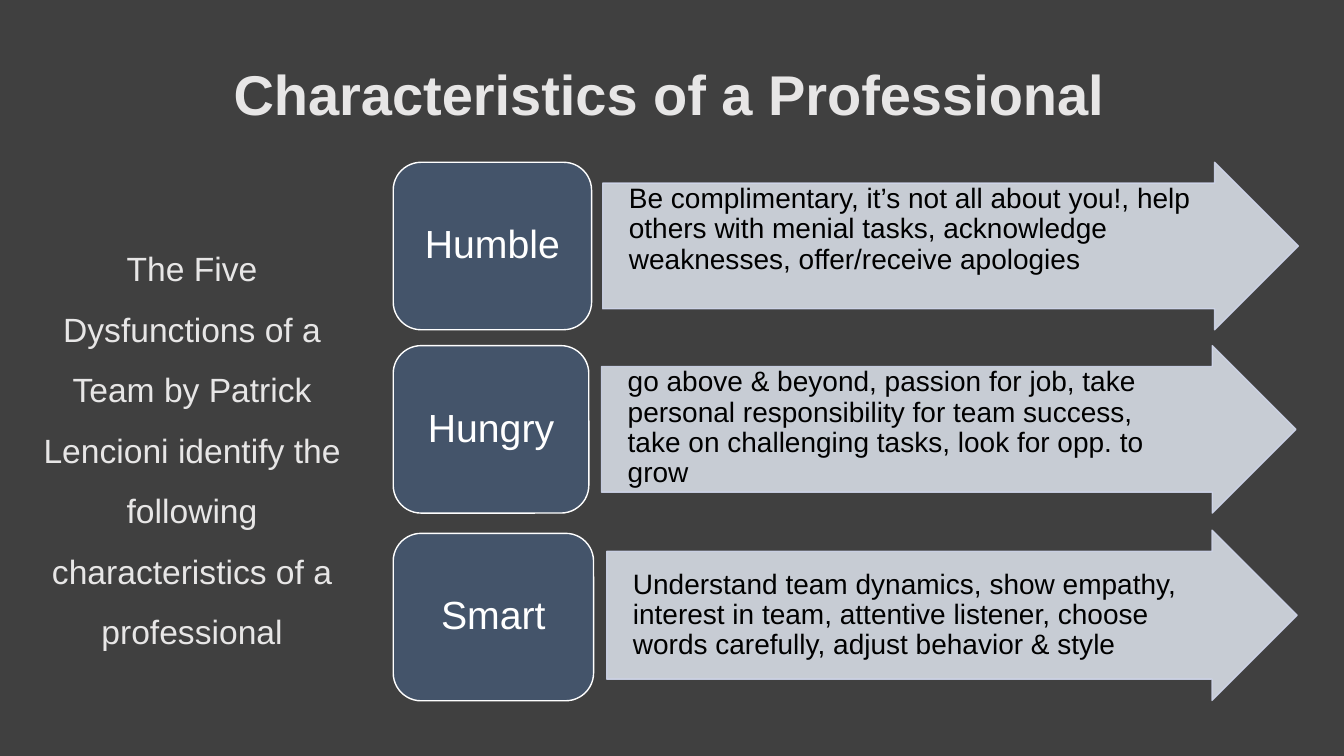
from lxml import etree
from pptx import Presentation, util as u
from pptx.dml.color import RGBColor
from pptx.enum import shapes, text
from pptx.oxml.ns import qn

CHARCOAL = RGBColor(0x40, 0x40, 0x40)
LIGHT_GRAY = RGBColor(0xE7, 0xE6, 0xE6)
PALE_BLUE = RGBColor(0xD6, 0xDC, 0xE5)
ARROW_EDGE = RGBColor(0xCF, 0xD5, 0xEA)
SLATE = RGBColor(0x44, 0x54, 0x6A)
WHITE = RGBColor(0xFF, 0xFF, 0xFF)
BLACK = RGBColor(0, 0, 0)

CENTER, LEFT = text.PP_ALIGN.CENTER, text.PP_ALIGN.LEFT
MIDDLE, TOP = text.MSO_ANCHOR.MIDDLE, text.MSO_ANCHOR.TOP

# Name, tile top and width, arrow left, top, width and height (cm), text anchor, details
TRAITS = [
    ("Humble", 4.09, 5.0, 15.19, 4.09, 17.53, 4.22, TOP,
     "Be complimentary, it’s not all about you!, help others with menial tasks, "
     "acknowledge weaknesses, offer/receive apologies"),
    ("Hungry", 8.71, 4.93, 15.16, 8.71, 17.5, 4.22, TOP,
     "go above & beyond, passion for job, take personal responsibility for team success, "
     "take on challenging tasks, look for opp. to grow"),
    ("Smart", 13.44, 5.05, 15.29, 13.36, 17.4, 4.29, MIDDLE,
     "Understand team dynamics, show empathy, interest in team, attentive listener, "
     "choose words carefully, adjust behavior & style"),
]
TILE_LEFT, TILE_HEIGHT = 9.91, 4.22


class SlideBuilder:
    font_name = "Arial"

    def __init__(self, slide):
        self.slide = slide
        slide.background.fill.solid()
        slide.background.fill.fore_color.rgb = CHARCOAL

    def set_text(self, shape, words, size, color, align=CENTER, anchor=MIDDLE,
                 spacing=0.9, before=0, bold=False, insets=(0.25, 0.13, 0.25, 0.13)):
        frame = shape.text_frame
        sides = ("margin_left", "margin_top", "margin_right", "margin_bottom")
        frame_format = {side: u.Cm(inset) for side, inset in zip(sides, insets)}
        frame_format.update(word_wrap=True, vertical_anchor=anchor)
        paragraph = frame.paragraphs[0]
        paragraph.text = words
        formats = [
            (frame, frame_format),
            (paragraph, {"alignment": align, "line_spacing": spacing,
                         "space_before": u.Pt(before)}),
            (paragraph.runs[0].font, {"name": self.font_name, "size": u.Pt(size), "bold": bold}),
        ]
        for target, values in formats:
            for name, value in values.items():
                setattr(target, name, value)
        paragraph.runs[0].font.color.rgb = color

    def text_box(self, box, words, size, **style):
        shape = self.slide.shapes.add_textbox(*map(u.Cm, box))
        self.set_text(shape, words, size, LIGHT_GRAY, **style)

    def block(self, kind, box, fill, line):
        shape = self.slide.shapes.add_shape(kind, *map(u.Cm, box))
        shape.shadow.inherit = False
        shape.fill.solid()
        shape.fill.fore_color.rgb = fill
        shape.line.color.rgb = line
        shape.line.width = u.Pt(1)
        return shape

    def arrow(self, box, words, anchor):
        shape = self.block(shapes.MSO_SHAPE.RIGHT_ARROW, box, PALE_BLUE, ARROW_EDGE)
        shape.adjustments[0], shape.adjustments[1] = 0.75, 0.5
        # Fill and outline are 90% opaque
        for color in shape._element.spPr.iter(qn("a:srgbClr")):
            etree.SubElement(color, qn("a:alpha"), val="90000")
        # The right inset keeps the text out of the arrowhead
        self.set_text(shape, words, 20, BLACK, align=LEFT, anchor=anchor,
                      insets=(0.66, 0.03, 1.05, 0.03))

    def tile(self, box, words):
        shape = self.block(shapes.MSO_SHAPE.ROUNDED_RECTANGLE, box, SLATE, WHITE)
        self.set_text(shape, words, 28, WHITE, insets=(0.3, 0.15, 0.3, 0.15))


def main():
    presentation = Presentation()
    presentation.slide_width, presentation.slide_height = u.Cm(33.87), u.Cm(19.05)
    builder = SlideBuilder(presentation.slides.add_slide(presentation.slide_layouts[6]))

    # Title and introduction
    builder.text_box((0.74, 0.84, 32.23, 3.23), "Characteristics of a Professional",
                     40, bold=True)
    builder.text_box((0.74, 4.52, 8.2, 13.13),
                     "The Five Dysfunctions of a Team by Patrick Lencioni identify "
                     "the following characteristics of a professional",
                     24, spacing=1.5, before=10)

    # One arrow and one tile per trait
    for name, tile_top, tile_width, left, top, width, height, anchor, details in TRAITS:
        builder.arrow((left, top, width, height), details, anchor)
        builder.tile((TILE_LEFT, tile_top, tile_width, TILE_HEIGHT), name)

    presentation.save("out.pptx")


if __name__ == "__main__":
    main()
